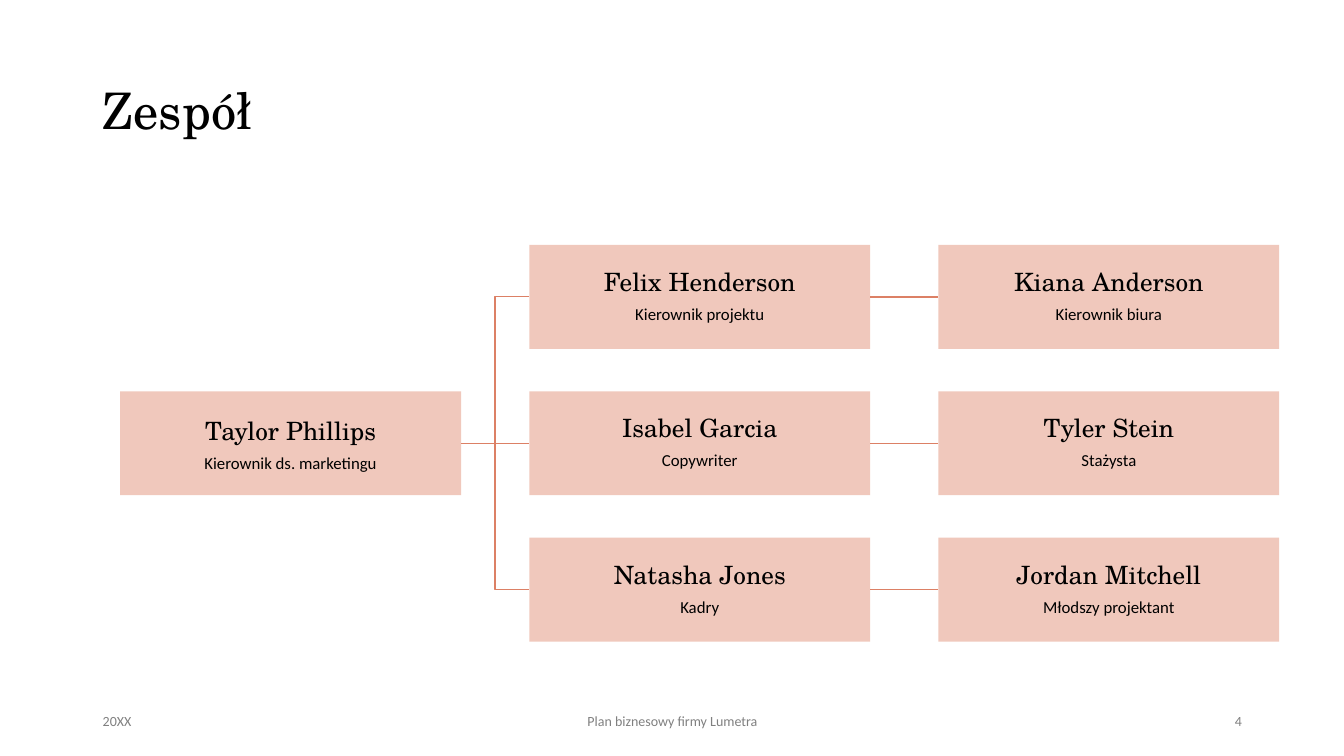
from dataclasses import dataclass

from lxml import etree
from pptx import Presentation
from pptx import util as u
from pptx.dml.color import RGBColor
from pptx.enum import shapes, text
from pptx.oxml.ns import qn


@dataclass(frozen=True)
class Theme:
    """Colours, fonts and type sizes of the slide."""
    ink: str = "000000"
    muted: str = "808080"
    card: str = "F0C8BC"
    line: str = "DC8065"
    serif: str = "TeX Gyre Schola"
    sans: str = "Calibri"
    title: float = 36
    name: float = 18
    role: float = 12
    footer: float = 10


T = Theme()
ALIGN = text.PP_ALIGN
LEFT_SIDE, RIGHT_SIDE = 1, 3
LEADER = ("Taylor Phillips", "Kierownik ds. marketingu")
TEAM = [
    (("Felix Henderson", "Kierownik projektu"), ("Kiana Anderson", "Kierownik biura")),
    (("Isabel Garcia", "Copywriter"), ("Tyler Stein", "Stażysta")),
    (("Natasha Jones", "Kadry"), ("Jordan Mitchell", "Młodszy projektant")),
]


def write(p, content, font=T.sans, size=T.role, color=T.ink, align=ALIGN.LEFT,
          spacing=1.0, after=0):
    """Write text into a paragraph with the given format."""
    p.alignment, p.line_spacing, p.space_after = align, spacing, u.Pt(after)
    r = p.add_run()
    r.text = content
    r.font.name, r.font.size = font, u.Pt(size)
    r.font.color.rgb = RGBColor.from_string(color)


def add_title(s, content, left, top, width, height):
    """Place the slide title in its placeholder."""
    sp = s.shapes.title
    sp.left, sp.top, sp.width, sp.height = map(u.Cm, (left, top, width, height))
    tf = sp.text_frame
    tf.vertical_anchor = text.MSO_ANCHOR.MIDDLE
    write(tf.paragraphs[0], content, font=T.serif, size=T.title, spacing=0.9)


def add_footer(s, left, top, width, height):
    """Place the date, the plan name and the page number along a strip."""
    side, middle = 7.62, 11.43
    parts = [
        ("20XX", left, side, ALIGN.LEFT),
        ("Plan biznesowy firmy Lumetra", left + (width - middle) / 2, middle, ALIGN.CENTER),
        ("4", left + width - side, side, ALIGN.RIGHT),
    ]
    for content, x, w, align in parts:
        sp = s.shapes.add_textbox(u.Cm(x), u.Cm(top), u.Cm(w), u.Cm(height))
        tf = sp.text_frame
        tf.word_wrap, tf.vertical_anchor = True, text.MSO_ANCHOR.MIDDLE
        write(tf.paragraphs[0], content, size=T.footer, color=T.muted, align=align)


def add_card(s, person, left, top, width, height, inset_top=0.03):
    """Draw one person's card and return it."""
    sp = s.shapes.add_shape(shapes.MSO_SHAPE.RECTANGLE,
                            u.Cm(left), u.Cm(top), u.Cm(width), u.Cm(height))
    sp.shadow.inherit = False
    sp.fill.solid()
    sp.fill.fore_color.rgb = RGBColor.from_string(T.card)
    sp.line.fill.background()
    tf = sp.text_frame
    tf.word_wrap, tf.vertical_anchor = True, text.MSO_ANCHOR.MIDDLE
    tf.margin_left = tf.margin_right = tf.margin_bottom = u.Cm(0.03)
    tf.margin_top = u.Cm(inset_top)
    name, role = person
    write(tf.paragraphs[0], name, font=T.serif, size=T.name,
          align=ALIGN.CENTER, spacing=0.9, after=6.3)
    write(tf.add_paragraph(), role, align=ALIGN.CENTER, spacing=0.9, after=4.2)
    return sp


def link(s, start, end):
    """Connect the right side of one card to the left side of another."""
    kinds = shapes.MSO_CONNECTOR
    kind = kinds.STRAIGHT if start.top == end.top else kinds.ELBOW
    c = s.shapes.add_connector(kind, 0, 0, 0, 0)
    c.begin_connect(start, RIGHT_SIDE)
    c.end_connect(end, LEFT_SIDE)
    c.line.width = u.Pt(1)
    c.line.color.rgb = RGBColor.from_string(T.line)
    etree.SubElement(c._element.spPr, qn("a:effectLst"))


def add_team_chart(s, left, top, width, height):
    """Lay out the leader and the rows of the team from left to right."""
    card_w, card_h = 8.59, 2.62
    step_x = (width - card_w) / 2
    step_y = (height - card_h) / (len(TEAM) - 1)
    leader = add_card(s, LEADER, left, top + step_y, card_w, card_h, inset_top=0.18)
    for row, (lead, member) in enumerate(TEAM):
        y = top + row * step_y
        first = add_card(s, lead, left + step_x, y, card_w, card_h)
        second = add_card(s, member, left + 2 * step_x, y, card_w, card_h)
        link(s, leader, first)
        link(s, first, second)


def main():
    """Build the team slide and save it."""
    prs = Presentation()
    prs.slide_width, prs.slide_height = u.Cm(33.87), u.Cm(19.05)
    s = prs.slides.add_slide(prs.slide_layouts[5])
    add_title(s, "Zespół", 2.34, 1.96, 29.21, 1.78)
    add_team_chart(s, 3.03, 6.17, 29.21, 10)
    add_footer(s, 2.34, 17.65, 29.21, 1.02)
    prs.save("out.pptx")


if __name__ == "__main__":
    main()
